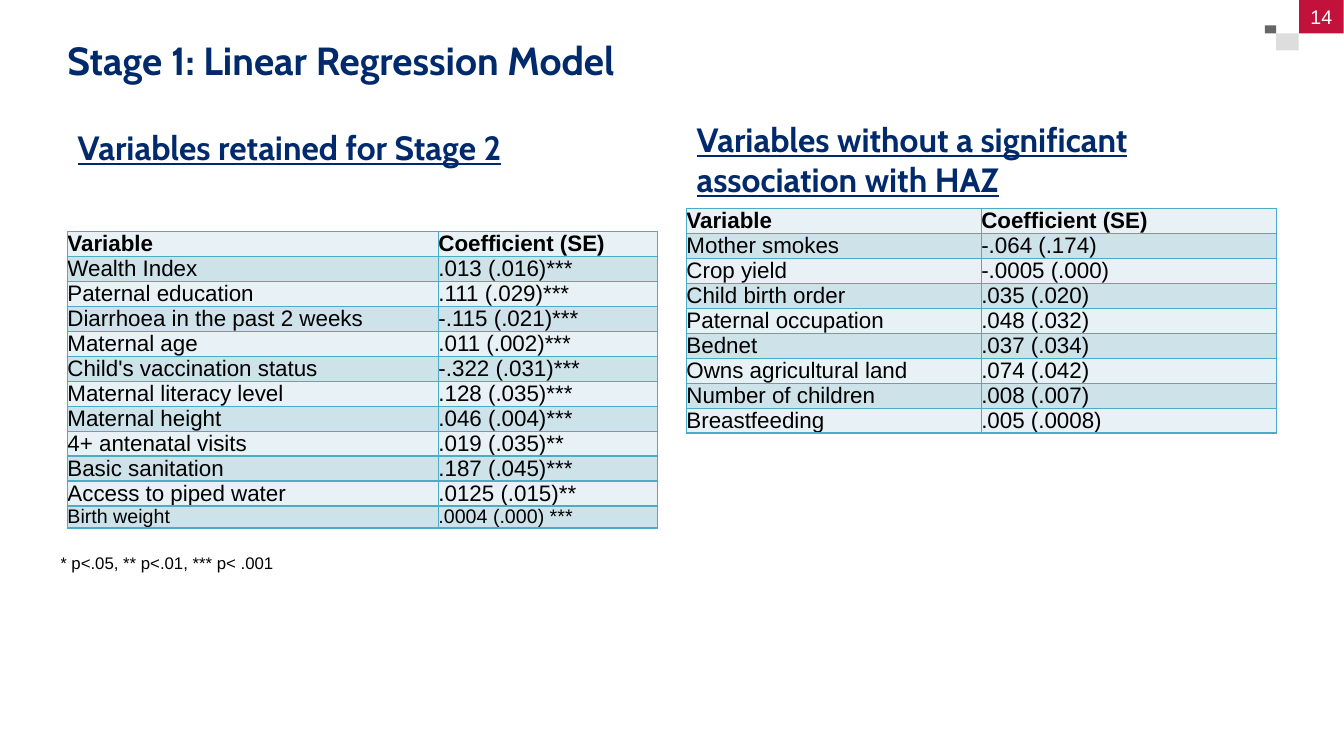
from lxml import etree
from pptx import Presentation
from pptx.dml.color import RGBColor
from pptx.enum.shapes import MSO_SHAPE
from pptx.enum.text import MSO_ANCHOR, MSO_AUTO_SIZE, PP_ALIGN
from pptx.oxml.ns import qn
from pptx.util import Cm, Pt

RECT = MSO_SHAPE.RECTANGLE
TOP, MIDDLE = MSO_ANCHOR.TOP, MSO_ANCHOR.MIDDLE
LEFT, CENTER = PP_ALIGN.LEFT, PP_ALIGN.CENTER
FIXED = MSO_AUTO_SIZE.NONE

NAVY = RGBColor(0x00, 0x2A, 0x6C)
RED = RGBColor(0xC2, 0x11, 0x3A)
GREY = RGBColor(0x66, 0x66, 0x66)
SILVER = RGBColor(0xDD, 0xDD, 0xDD)
TEAL = RGBColor(0x4B, 0xAC, 0xC6)
PALE = RGBColor(0xE8, 0xF1, 0xF5)
BLUE = RGBColor(0xCE, 0xE2, 0xEA)
BLACK = RGBColor(0x00, 0x00, 0x00)
WHITE = RGBColor(0xFF, 0xFF, 0xFF)

TITLE = "Stage 1: Linear Regression Model"
PAGE = "14"
NOTE = "* p<.05, ** p<.01, *** p< .001"
HEADER = ("Variable", "Coefficient (SE)")
KEPT = [
    HEADER,
    ("Wealth Index", ".013 (.016)***"),
    ("Paternal education", ".111 (.029)***"),
    ("Diarrhoea in the past 2 weeks", "-.115 (.021)***"),
    ("Maternal age", ".011 (.002)***"),
    ("Child's vaccination status", "-.322 (.031)***"),
    ("Maternal literacy level", ".128 (.035)***"),
    ("Maternal height", ".046 (.004)***"),
    ("4+ antenatal visits", ".019 (.035)**"),
    ("Basic sanitation", ".187 (.045)***"),
    ("Access to piped water", ".0125 (.015)**"),
    ("Birth weight", ".0004 (.000) ***"),
]
DROPPED = [
    HEADER,
    ("Mother smokes", "-.064 (.174)"),
    ("Crop yield", "-.0005 (.000)"),
    ("Child birth order", ".035 (.020)"),
    ("Paternal occupation", ".048 (.032)"),
    ("Bednet", ".037 (.034)"),
    ("Owns agricultural land", ".074 (.042)"),
    ("Number of children", ".008 (.007)"),
    ("Breastfeeding", ".005 (.0008)"),
]
LEFT_X, RIGHT_X, HALF = 1.7, 17.3, 14.86
HEADS = [
    (1, "Variables retained for Stage 2", LEFT_X, 3.07),
    (3, "Variables without a significant association with HAZ", RIGHT_X, 2.87),
]
SQUARES = [
    (31.88, 0.64, 0.28, 0.2, GREY, ""),
    (32.16, 0.84, 0.57, 0.43, SILVER, ""),
    (32.74, 0, 1.12, 0.84, RED, PAGE),
]
ROW = 0.51


def write(frame, text, font="Arial", size=16, color=BLACK, bold=False,
          line=False, align=LEFT):
    para = frame.paragraphs[0]
    para.text = text
    para.alignment = align
    para.space_before = Pt(0)
    face = para.runs[0].font
    face.name, face.size, face.bold = font, Pt(size), bold
    face.underline = line
    face.color.rgb = color


def place(shape, x, y, w, h):
    shape.left, shape.top = Cm(x), Cm(y)
    shape.width, shape.height = Cm(w), Cm(h)


def clear(box):
    box.margin_left = box.margin_right = 0
    box.margin_top = box.margin_bottom = 0
    box.vertical_anchor = MIDDLE


def border(cell):
    props = cell._tc.get_or_add_tcPr()
    for side in ("lnL", "lnR", "lnT", "lnB"):
        edge = etree.SubElement(props, qn("a:" + side), w=str(Pt(1)))
        fill = etree.SubElement(edge, qn("a:solidFill"))
        etree.SubElement(fill, qn("a:srgbClr"), val=str(TEAL))


def grid(slide, rows, x, y, cols, fills=(PALE, BLUE), edged=True,
         head=True, size=16, small=()):
    table = slide.shapes.add_table(
        len(rows), len(cols), Cm(x), Cm(y), Cm(sum(cols)),
        Cm(ROW * len(rows))).table
    table.first_row = table.horz_banding = False
    for col, width in zip(table.columns, cols):
        col.width = Cm(width)
    for r, row in enumerate(rows):
        for c, text in enumerate(row):
            cell = table.cell(r, c)
            clear(cell)
            if edged:
                border(cell)
            cell.fill.solid()
            cell.fill.fore_color.rgb = fills[r % len(fills)]
            write(cell.text_frame, text, size=14 if row in small else size,
                  bold=head and r == 0)


def main():
    deck = Presentation()
    deck.slide_width, deck.slide_height = Cm(33.87), Cm(19.05)
    slide = deck.slides.add_slide(deck.slide_layouts[4])
    holders = {p.placeholder_format.idx: p for p in slide.placeholders}
    for idx in (2, 4):
        item = holders[idx].element
        item.getparent().remove(item)

    for x, y, w, h, color, text in SQUARES:
        square = slide.shapes.add_shape(RECT, Cm(x), Cm(y), Cm(w), Cm(h))
        square.shadow.inherit = False
        square.fill.solid()
        square.fill.fore_color.rgb = color
        square.line.fill.background()
        if text:
            clear(square.text_frame)
            write(square.text_frame, text, size=14, color=WHITE, align=CENTER)

    title = holders[0]
    place(title, LEFT_X, 0.51, 30.2, 1.98)
    clear(title.text_frame)
    title.text_frame.auto_size = FIXED
    write(title.text_frame, TITLE, font="Cabin", size=28, color=NAVY, bold=True)

    for idx, text, x, y in HEADS:
        head = holders[idx]
        place(head, x, y, HALF, 1.5)
        head.text_frame.vertical_anchor = TOP
        head.text_frame.auto_size = FIXED
        write(head.text_frame, text, font="Cabin", size=24, color=NAVY,
              bold=True, line=True)

    grid(slide, KEPT, LEFT_X, 5.84, (9.35, 5.51), small=KEPT[-1:])
    grid(slide, DROPPED, RIGHT_X, 5.26, (HALF / 2, HALF / 2))
    grid(slide, [(NOTE,)], 1.52, 13.94, (12.83,), fills=(WHITE,),
         edged=False, head=False, size=12)
    deck.save("out.pptx")


if __name__ == "__main__":
    main()
